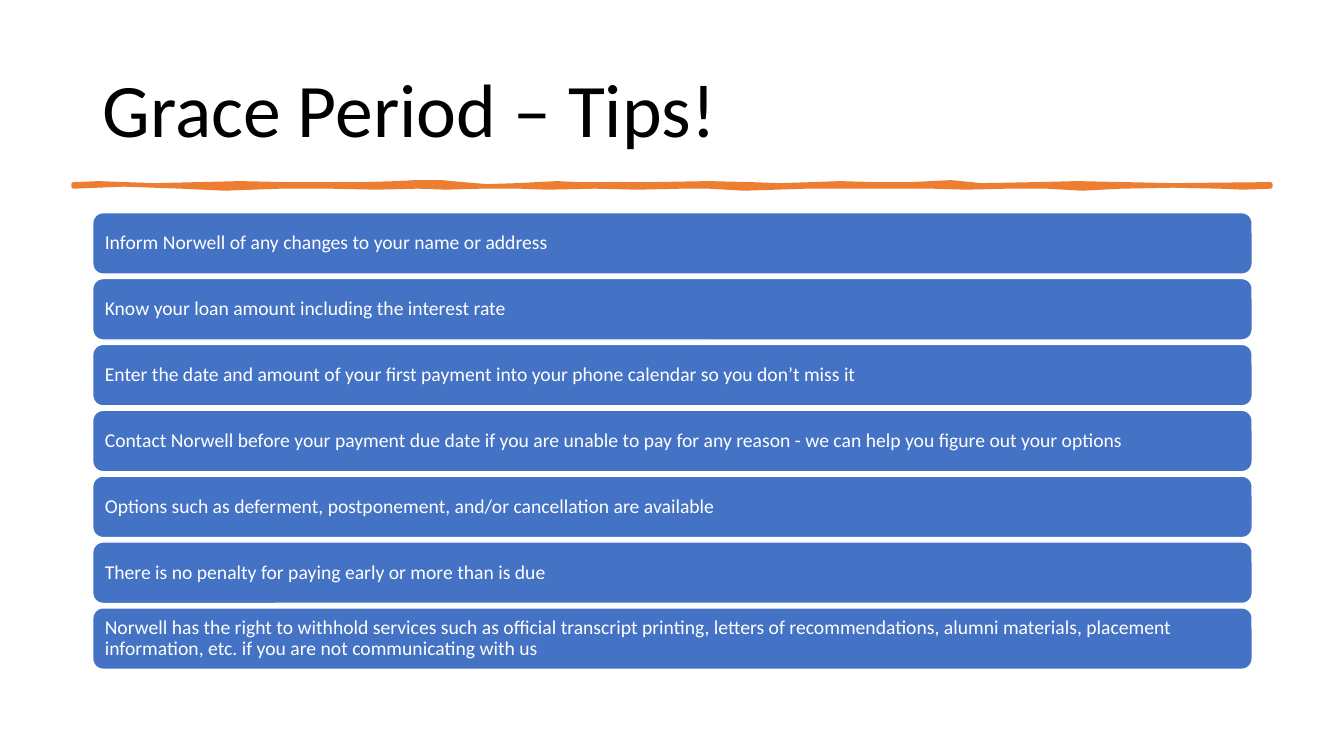
from pptx import Presentation
from pptx.dml.color import RGBColor
from pptx.enum import shapes, text
from pptx.util import Inches, Pt

BLACK = RGBColor(0x00, 0x00, 0x00)
WHITE = RGBColor(0xFF, 0xFF, 0xFF)
BLUE = RGBColor(0x44, 0x72, 0xC4)
ORANGE = RGBColor(0xED, 0x7D, 0x31)
FONT = "Calibri"

TITLE = "Grace Period – Tips!"
TIPS = [
    "Inform Norwell of any changes to your name or address",
    "Know your loan amount including the interest rate",
    "Enter the date and amount of your first payment into your phone calendar so you don’t miss it",
    "Contact Norwell before your payment due date if you are unable to pay for any reason"
    " - we can help you figure out your options",
    "Options such as deferment, postponement, and/or cancellation are available",
    "There is no penalty for paying early or more than is due",
    "Norwell has the right to withhold services such as official transcript printing, letters of"
    " recommendations, alumni materials, placement information, etc. if you are not communicating with us",
]

BRUSH_TOP = [
    (0, 0), (0.25, -0.01), (0.51, 0), (0.8, 0.01), (1.25, 0), (1.65, -0.01), (2.11, 0),
    (2.88, 0), (3.2, -0.01), (3.4, -0.02), (3.65, -0.02), (3.86, 0), (4.1, 0.02),
    (4.4, 0.01), (4.6, 0), (4.8, -0.01), (4.99, 0), (5.73, 0), (6.3, -0.01), (6.71, 0),
    (7, 0.01), (7.33, 0), (7.6, -0.01), (7.95, 0), (8.3, 0), (8.7, -0.02), (9, 0.01),
    (9.56, 0), (9.95, -0.01), (10.42, 0), (10.9, 0.01), (11.87, 0),
]
BRUSH_BOTTOM = [
    (11.87, 0.02), (11.6, 0.03), (11.37, 0.02), (10.9, 0.01), (10.39, 0.02), (10, 0.04),
    (9.65, 0.02), (9.26, 0.02), (8.85, 0.03), (8.52, 0.02), (7.9, 0.02), (7.27, 0.02),
    (6.65, 0.04), (6.3, 0.02), (6.03, 0.02), (5.6, 0.03), (5.17, 0.02), (4.7, 0.03),
    (4.42, 0.02), (4.25, 0.02), (4.04, 0.02), (3.7, 0.03), (3.41, 0.02), (3, 0.03),
    (2.55, 0.02), (2.05, 0.02), (1.5, 0.04), (1.07, 0.02), (0.5, 0), (0, 0.02),
]


def write(shape, words, size, color, inset):
    frame = shape.text_frame
    frame.word_wrap = True
    frame.vertical_anchor = text.MSO_ANCHOR.MIDDLE
    frame.margin_left = frame.margin_right = Inches(inset)
    frame.margin_top = frame.margin_bottom = Inches(0.05)
    frame.text = words
    para = frame.paragraphs[0]
    para.alignment = text.PP_ALIGN.LEFT
    para.line_spacing = 0.9
    font = para.runs[0].font
    font.name, font.size, font.color.rgb = FONT, Pt(size), color


def paint(shape, fill, line, width):
    shape.shadow.inherit = False
    shape.fill.solid()
    shape.fill.fore_color.rgb = fill
    shape.line.color.rgb = line
    shape.line.width = Pt(width)


def add_title(page, left, top, width, height):
    box = page.shapes.add_textbox(Inches(left), Inches(top), Inches(width), Inches(height))
    write(box, TITLE, 54, BLACK, 0.1)


def add_brush_stroke(page, left, top):
    outline = [(Inches(left + x), Inches(top + y)) for x, y in BRUSH_TOP + BRUSH_BOTTOM]
    builder = page.shapes.build_freeform(*outline[0])
    builder.add_line_segments(outline[1:], close=True)
    paint(builder.convert_to_shape(), ORANGE, ORANGE, 3.25)


def add_tips(page, left, top, width, height):
    bar_height = 0.61
    pitch = (height - bar_height) / (len(TIPS) - 1)
    for row, tip in enumerate(TIPS):
        bar = page.shapes.add_shape(
            shapes.MSO_SHAPE.ROUNDED_RECTANGLE,
            Inches(left), Inches(top + row * pitch), Inches(width), Inches(bar_height))
        paint(bar, BLUE, WHITE, 1)
        write(bar, tip, 14, WHITE, 0.09)


def main():
    deck = Presentation()
    deck.slide_width, deck.slide_height = Inches(13.33), Inches(7.5)
    page = deck.slides.add_slide(deck.slide_layouts[6])
    add_title(page, 0.92, 0.4, 11.5, 1.45)
    add_brush_stroke(page, 0.73, 1.83)
    add_tips(page, 0.92, 2.11, 11.5, 4.53)
    deck.save("out.pptx")


if __name__ == "__main__":
    main()
